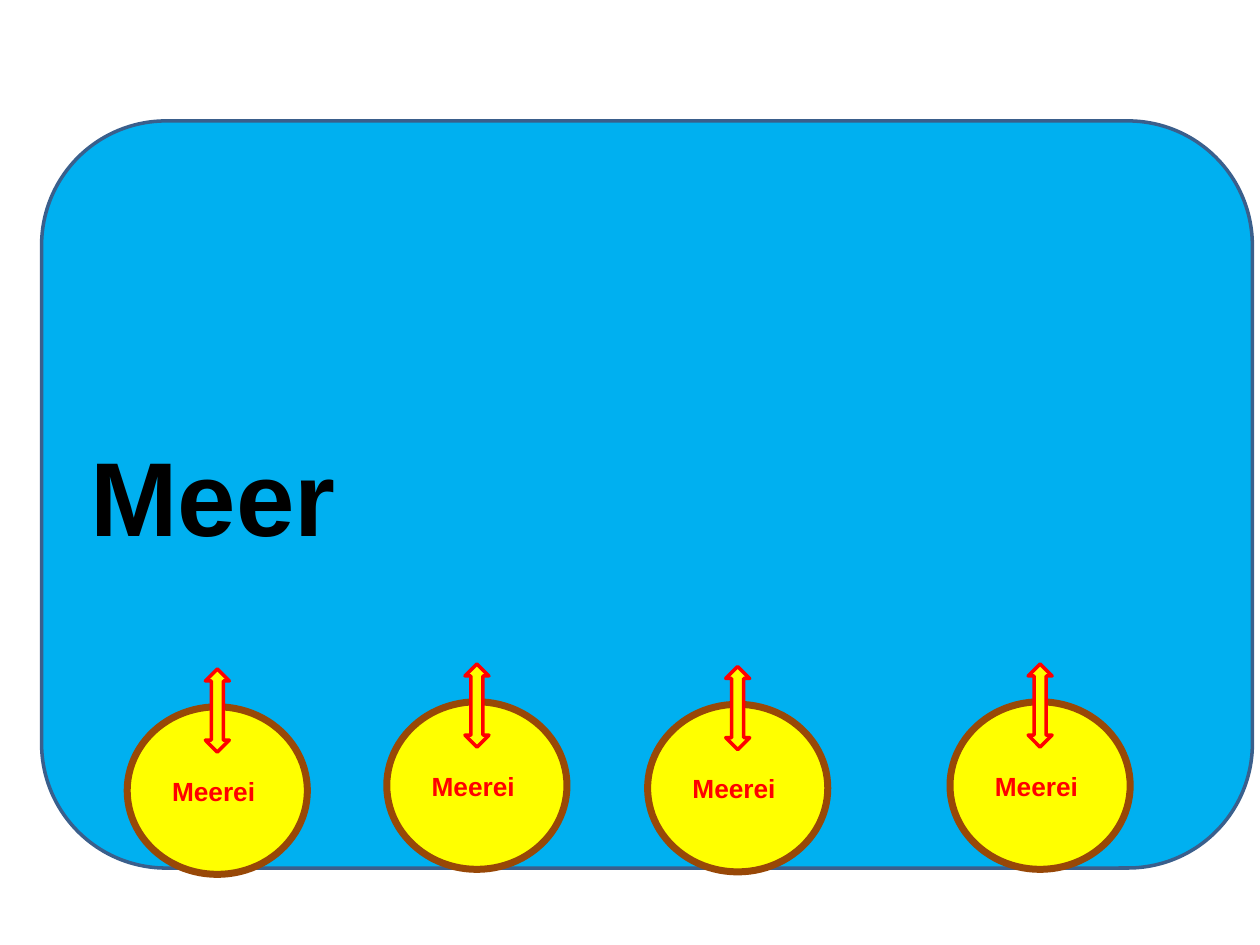
"""Builds a slide of a sea with four sea eggs on its floor."""
from pptx import Presentation
from pptx.dml.color import RGBColor
from pptx.enum.shapes import MSO_SHAPE as Shape
from pptx.enum.text import MSO_ANCHOR as Anchor, PP_ALIGN as Align
from pptx.util import Inches, Pt


def color(hex_value):
    """Turn a hex string into a colour."""
    return RGBColor.from_string(hex_value)


class SeaSlide:
    """Holds the style and the current slide."""

    font = "Arial"
    yellow = "FFFF00"
    red = "FF0000"

    def __init__(self, slide):
        """Keep the slide to draw on."""
        self.slide = slide

    def shape(self, kind, box, fill, line, width):
        """Add a filled and outlined preset shape."""
        shape = self.slide.shapes.add_shape(kind, *map(Inches, box))
        shape.shadow.inherit = False
        shape.fill.solid()
        shape.fill.fore_color.rgb = color(fill)
        shape.line.color.rgb = color(line)
        shape.line.width = Pt(width)
        return shape

    def label(self, shape, text, size, ink, align):
        """Write one bold line in a shape, centred vertically."""
        frame = shape.text_frame
        frame.vertical_anchor = Anchor.MIDDLE
        paragraph = frame.paragraphs[0]
        paragraph.alignment = align
        run = paragraph.add_run()
        run.text = text
        formats = {"name": self.font, "size": Pt(size), "bold": True}
        for key, value in formats.items():
            setattr(run.font, key, value)
        run.font.color.rgb = color(ink)

    def sea(self, box):
        """Add the sea with its title."""
        sea = self.shape(Shape.ROUNDED_RECTANGLE, box, "00B0F0", "3A5F8C", 2)
        self.label(sea, "Meer", 60, "000000", Align.LEFT)

    def egg(self, left, top):
        """Add a sea egg and the exchange arrow across its top edge."""
        egg = self.shape(Shape.OVAL, (left, top, 1.43, 1.33), self.yellow, "984807", 4)
        for side in ("left", "top", "right", "bottom"):
            setattr(egg.text_frame, f"margin_{side}", 0)
        self.label(egg, "Meerei ", 15, self.red, Align.CENTER)
        arrow_box = (left + 0.62, top - 0.3, 0.19, 0.66)
        self.shape(Shape.UP_DOWN_ARROW, arrow_box, self.yellow, self.red, 2)


def main():
    """Build and save the slide."""
    deck = Presentation()
    deck.slide_width, deck.slide_height = Inches(10), Inches(7.5)
    page = SeaSlide(deck.slides.add_slide(deck.slide_layouts[6]))
    page.sea((0.33, 0.96, 9.61, 5.93))
    for left, top in ((7.54, 5.57), (5.14, 5.59), (3.07, 5.57), (1.01, 5.61)):
        page.egg(left, top)
    deck.save("out.pptx")


if __name__ == "__main__":
    main()
